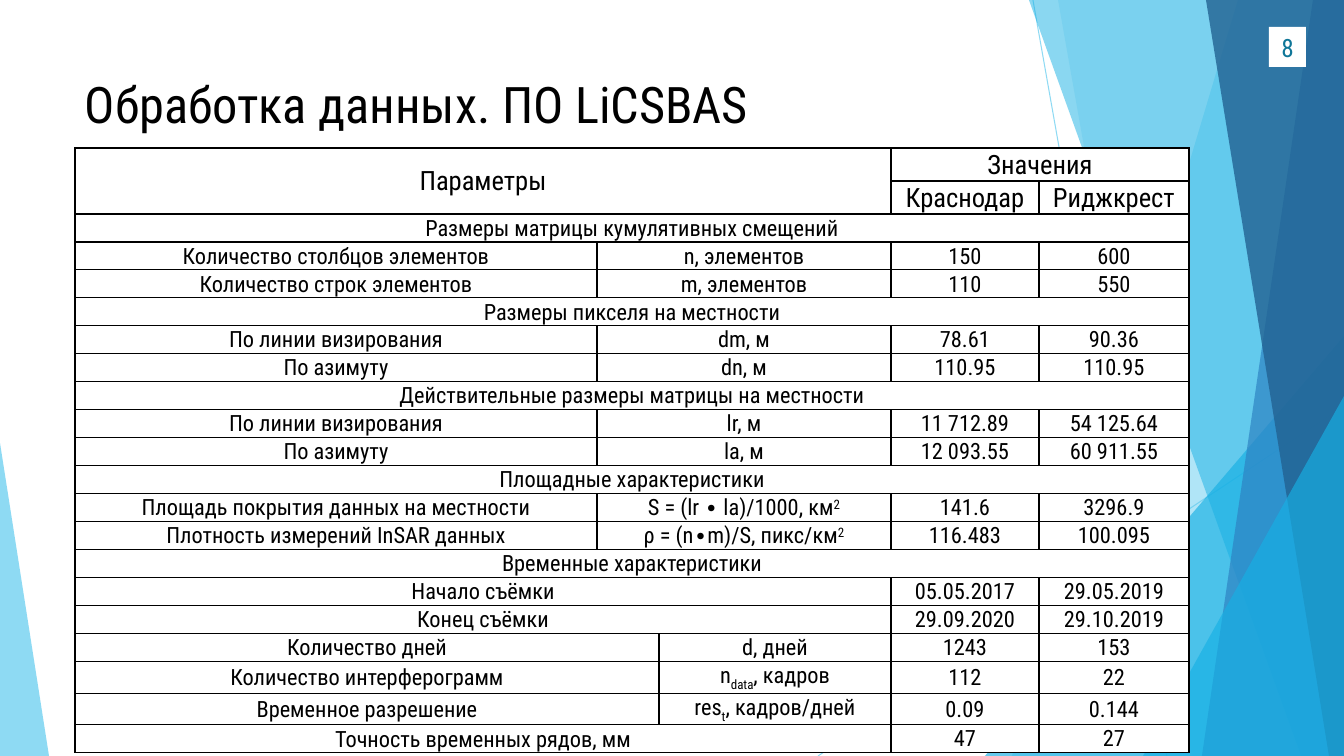
"""Slide with a table of LiCSBAS processing parameters for two sites."""
from lxml.etree import SubElement
from pptx import Presentation
from pptx.dml.color import RGBColor
from pptx.enum.shapes import MSO_CONNECTOR, MSO_SHAPE
from pptx.enum.text import MSO_ANCHOR, PP_ALIGN
from pptx.oxml import parse_xml
from pptx.oxml.ns import nsdecls, qn
from pptx.util import Emu, Pt

SCALE = 12192000 / 1344
W, H = 1344, 756
FONT = "Roboto Condensed"
COLORS = {"sky": "5FCBEF", "cyan": "17B0E4", "blue": "2E83C3", "navy": "226292",
          "teal": "0F7698", "white": "FFFFFF", "black": "000000"}


def px(*lengths):
    return [Emu(round(n * SCALE)) for n in lengths]


def paint(fill, color, opacity=100):
    fill.solid()
    fill.fore_color.rgb = RGBColor.from_string(COLORS[color])
    if opacity < 100:
        clr = fill._xPr.find(".//" + qn("a:srgbClr"))
        SubElement(clr, qn("a:alpha")).set("val", str(opacity * 1000))


prs = Presentation()
prs.slide_width, prs.slide_height = px(W, H)
s = prs.slides.add_slide(prs.slide_layouts[6])
shapes = s.shapes

for ends in [(1033, 0, 1167, H), (W, 406, 818, H)]:
    ln = shapes.add_connector(MSO_CONNECTOR.STRAIGHT, *px(*ends))
    ln.line.width = Pt(0.75)
    paint(ln.line.fill, "sky", 70)
    SubElement(ln._element.spPr, qn("a:effectLst"))

facets = [
    ("band", (1238, 1012), "sky", 36),
    ("band", (1058, 1192), "sky", 20),
    ("triangle", (985, 336, 359, 420, 1), "cyan", 66),
    ("band", (1029, 1301), "cyan", 50),
    ("band", (1313, 1202), "blue", 70),
    ("band", (1206, 1329), "navy", 80),
    ("triangle", (1143, 396, 201, 360, 1), "cyan", 66),
    ("triangle", (0, 443, 49, 313, 0), "sky", 70),
]
for kind, geometry, color, opacity in facets:
    if kind == "band":
        top, bottom = geometry
        fb = shapes.build_freeform(top, 0, scale=SCALE)
        fb.add_line_segments([(W, 0), (W, H), (bottom, H)], close=True)
        sp = fb.convert_to_shape()
    else:
        *box, apex = geometry
        sp = shapes.add_shape(MSO_SHAPE.ISOSCELES_TRIANGLE, *px(*box))
        sp.adjustments[0] = apex
    sp.shadow.inherit = False
    sp.line.fill.background()
    paint(sp.fill, color, opacity)

title = shapes.add_textbox(*px(75, 68, 948, 90))
tf = title.text_frame
tf.word_wrap = True
p = tf.paragraphs[0]
p.text = "Обработка данных. ПО LiCSBAS"
p.font.name, p.font.size = FONT, Pt(36)
paint(p.font.fill, "black")

rows = [
    ["Параметры", None, None, "Значения", None],
    [None, None, None, "Краснодар", "Риджкрест"],
    ["Размеры матрицы кумулятивных смещений", None, None, None, None],
    ["Количество столбцов элементов", "n, элементов", None, "150", "600"],
    ["Количество строк элементов", "m, элементов", None, "110", "550"],
    ["Размеры пикселя на местности", None, None, None, None],
    ["По линии визирования", "dm, м", None, "78.61", "90.36"],
    ["По азимуту", "dn, м", None, "110.95", "110.95"],
    ["Действительные размеры матрицы на местности", None, None, None, None],
    ["По линии визирования", "lr, м", None, "11 712.89", "54 125.64"],
    ["По азимуту", "la, м", None, "12 093.55", "60 911.55"],
    ["Площадные характеристики", None, None, None, None],
    ["Площадь покрытия данных на местности", "S = (lr ∙ la)/1000, км|^2", None,
     "141.6", "3296.9"],
    ["Плотность измерений InSAR данных", "ρ = (n∙m)/S, пикс/км|^2", None,
     "116.483", "100.095"],
    ["Временные характеристики", None, None, None, None],
    ["Начало съёмки", None, None, "05.05.2017", "29.05.2019"],
    ["Конец съёмки", None, None, "29.09.2020", "29.10.2019"],
    ["Количество дней", None, "d, дней", "1243", "153"],
    ["Количество интерферограмм", None, "n|_data|, кадров", "112", "22"],
    ["Временное разрешение", None, "res|_t|, кадров/дней", "0.09", "0.144"],
    ["Точность временных рядов, мм", None, None, "47", "27"],
]
widths = [522, 62, 232, 148, 150]
heights = [33] * 2 + [28] * (len(rows) - 2)
baselines = {"^": "30000", "_": "-25000"}

frame = shapes.add_table(len(rows), len(widths),
                         *px(75, 148, sum(widths), sum(heights)))
table = frame.table
table.first_row = table.horz_banding = False
for column, width in zip(table.columns, px(*widths)):
    column.width = width
for row, height in zip(table.rows, px(*heights)):
    row.height = height

table.cell(0, 0).merge(table.cell(1, 2))
for i, texts in enumerate(rows):
    for j, text in enumerate(texts):
        cell = table.cell(i, j)
        cell.margin_left, cell.margin_top, cell.margin_right, cell.margin_bottom = px(1, 1, 1, 0)
        cell.vertical_anchor = MSO_ANCHOR.MIDDLE
        tcPr = cell._tc.get_or_add_tcPr()
        for side in "LRTB":
            tcPr.append(parse_xml(
                f'<a:ln{side} {nsdecls("a")} w="12700"><a:solidFill>'
                f'<a:srgbClr val="{COLORS["black"]}"/></a:solidFill></a:ln{side}>'))
        paint(cell.fill, "white")
        p = cell.text_frame.paragraphs[0]
        p.alignment = PP_ALIGN.CENTER
        p.font.name, p.font.size = FONT, Pt(19 if i < 2 else 16)
        paint(p.font.fill, "black")
        if text is None:
            continue
        for part in text.split("|"):
            r = p.add_run()
            r.text = part.lstrip("^_")
            if part[0] in baselines:
                r._r.get_or_add_rPr().set("baseline", baselines[part[0]])
        end = j
        while end + 1 < len(texts) and texts[end + 1] is None:
            end += 1
        if end > j and not cell.is_merge_origin:
            cell.merge(table.cell(i, end))
table.cell(len(rows) - 1, 0).vertical_anchor = MSO_ANCHOR.BOTTOM

number = shapes.add_shape(MSO_SHAPE.RECTANGLE, *px(1269, 27, 37, 40))
number.shadow.inherit = False
number.line.fill.background()
paint(number.fill, "white")
tf = number.text_frame
tf.vertical_anchor = MSO_ANCHOR.MIDDLE
p = tf.paragraphs[0]
p.text = "8"
p.alignment = PP_ALIGN.CENTER
p.font.name, p.font.size = FONT, Pt(18)
paint(p.font.fill, "teal")

prs.save("out.pptx")
